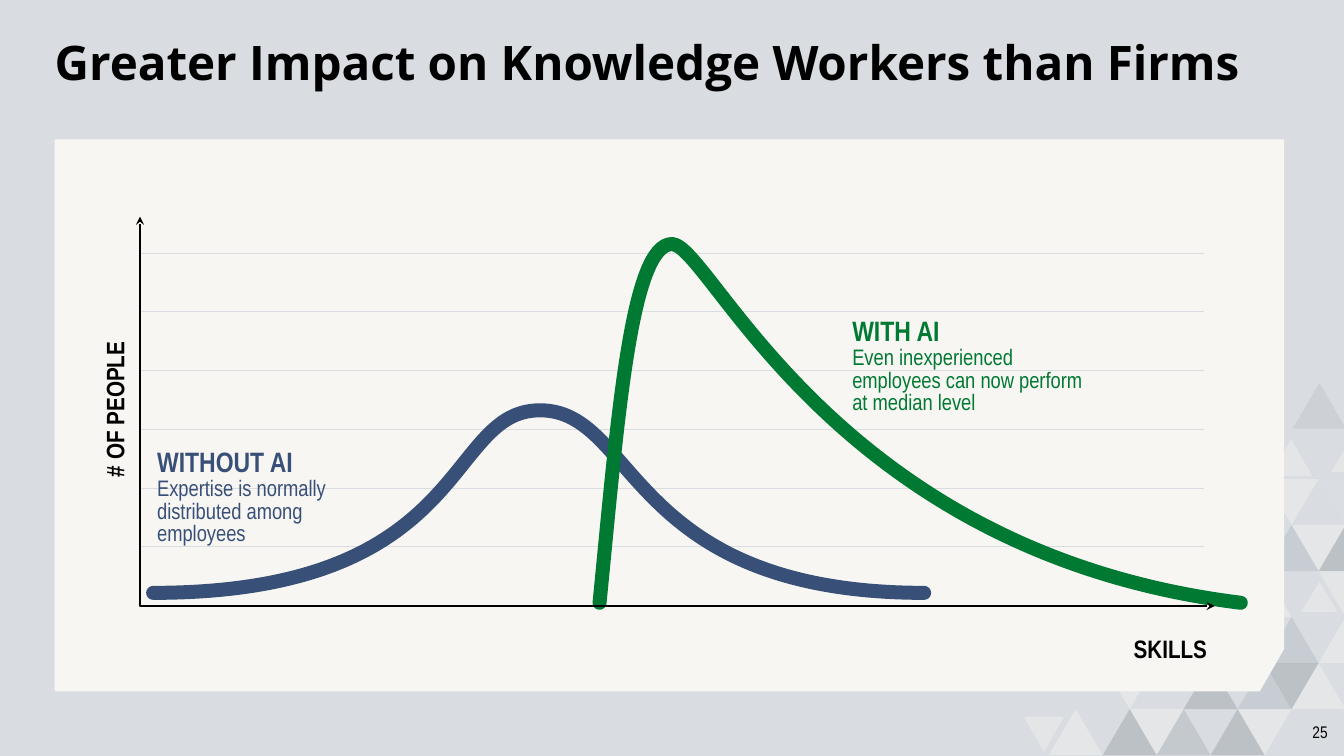
from pptx import Presentation
from pptx.dml.color import RGBColor
from pptx.enum.shapes import MSO_CONNECTOR as Connector
from pptx.enum.text import MSO_ANCHOR as Anchor, PP_ALIGN as Align
from pptx.oxml.ns import qn
from pptx.oxml.xmlchemy import OxmlElement as Element
from pptx.util import Cm, Pt

COLORS = {
    "background": "D9DCE0", "card": "F7F6F3", "text": "000000", "white": "FFFFFF",
    "slate": "4C636F", "dark": "314149", "without_ai": "384F77", "with_ai": "007932",
}
NARROW = "Arial Narrow"
HEADING = {"name": NARROW, "size": Pt(20), "bold": True}
BODY = {"name": NARROW, "size": Pt(16), "bold": False}
AXIS_LABEL = {"name": NARROW, "size": Pt(18), "bold": True}
PAGE_NUMBER = {"name": NARROW, "size": Pt(12)}
TITLE = {"name": "Open Sans", "size": Pt(34), "bold": True}


class SlideBuilder:
    """Holds the slide and draws its elements, with lengths in centimetres."""

    def __init__(self, slide):
        self.slide = slide
        self.shapes = slide.shapes

    def color(self, name):
        return RGBColor.from_string(COLORS[name])

    def background(self, name):
        fill = self.slide.background.fill
        fill.solid()
        fill.fore_color.rgb = self.color(name)

    def outline(self, points, closed):
        start, *rest = [(Cm(x), Cm(y)) for x, y in points]
        builder = self.shapes.build_freeform(*start)
        builder.add_line_segments(rest, close=closed)
        shape = builder.convert_to_shape()
        shape.shadow.inherit = False
        return shape

    def polygon(self, points, color, opacity=100):
        shape = self.outline(points, closed=True)
        shape.fill.solid()
        shape.fill.fore_color.rgb = self.color(color)
        shape.line.fill.background()
        if opacity < 100:
            alpha = Element("a:alpha")
            alpha.set("val", str(opacity * 1000))
            shape.fill._xPr.find(".//" + qn("a:srgbClr")).append(alpha)

    def triangle(self, center, base, apex, half, color, opacity):
        corners = [(center - half, base), (center, apex), (center + half, base)]
        self.polygon(corners, color, opacity)

    def open_path(self, points, color, width):
        shape = self.outline(points, closed=False)
        shape.fill.background()
        shape.line.color.rgb = self.color(color)
        shape.line.width = Pt(width)
        return shape

    def axes(self, points):
        line = self.open_path(points, "text", 1.5).line._get_or_add_ln()
        for tag in ("a:headEnd", "a:tailEnd"):
            end = Element(tag)
            end.set("type", "stealth")
            line.append(end)

    def curve(self, points, color):
        """Start point, then three Bezier points per segment."""
        shape = self.open_path(points, color, 10)
        shape.line._get_or_add_ln().set("cap", "rnd")
        steps = list(shape._element.iter(qn("a:lnTo")))
        for first in range(0, len(steps), 3):
            bezier = Element("a:cubicBezTo")
            steps[first].addprevious(bezier)
            for step in steps[first:first + 3]:
                bezier.append(step[0])
                step.getparent().remove(step)

    def gridline(self, left, right, y):
        line = self.shapes.add_connector(
            Connector.STRAIGHT, Cm(left), Cm(y), Cm(right), Cm(y))
        line.line.color.rgb = self.color("background")
        line.line.width = Pt(0.75)
        line._element.spPr.append(Element("a:effectLst"))

    def text(self, box, paragraphs, color="text", align=Align.LEFT,
             spacing=0.85, rotation=0, **frame_format):
        shape = self.shapes.add_textbox(*map(Cm, box))
        shape.rotation = rotation
        frame = shape.text_frame
        frame.word_wrap = True
        for key, value in frame_format.items():
            setattr(frame, key, value)
        for index, (wording, font_format) in enumerate(paragraphs):
            paragraph = frame.add_paragraph() if index else frame.paragraphs[0]
            paragraph.alignment = align
            paragraph.line_spacing = spacing
            run = paragraph.add_run()
            run.text = wording
            run.font.color.rgb = self.color(color)
            for key, value in font_format.items():
                setattr(run.font, key, value)


def draw_triangles(page):
    # Lattice: rows count up from the bottom, columns leftwards from the right
    half, height, right, bottom = 0.68, 1.16, 33.91, 19.03
    rows = [
        [(3, "card", 39), (4, "dark", 17), (6, "dark", 12),
         (7, "card", 39), (8, "dark", 17), (10, "card", 39)],
        [(0, "white", 5), (1, "card", 39), (2, "dark", 17),
         (3, "slate", 12), (5, "dark", 17), (8, "card", 39)],
        [(0, "card", 39), (2, "slate", 12), (4, "card", 35), (6, "dark", 17)],
        [(0, "card", 35), (3, "card", 39)],
        [(0, "dark", 17), (1, "card", 39), (2, "slate", 12)],
        [(0, "white", 5), (2, "card", 39)],
    ]
    for row, cells in enumerate(rows):
        low = bottom - row * height
        high = low - height
        for column, color, opacity in cells:
            points_up = (row + column) % 2 == 0
            base, apex = (low, high) if points_up else (high, low)
            page.triangle(right - column * half, base, apex, half, color, opacity)

    # Loose triangles: center, base, apex, half width
    for center, base, apex, width, color, opacity in [
        (26.31, 18.06, 18.95, 0.51, "card", 35),
        (33.25, 15.42, 14.66, 0.46, "card", 35),
        (32.54, 11.99, 11.07, 0.53, "card", 35),
        (33.25, 10.8, 9.65, 0.67, "dark", 7),
        (33.88, 11.89, 11.33, 0.33, "card", 35),
        (29.18, 15.67, 16.46, 0.46, "card", 35),
        (31.06, 14.45, 15.32, 0.48, "card", 35),
    ]:
        page.triangle(center, base, apex, width, color, opacity)


def main():
    deck = Presentation()
    deck.slide_width, deck.slide_height = Cm(33.87), Cm(19.05)
    page = SlideBuilder(deck.slides.add_slide(deck.slide_layouts[6]))

    # Backdrop and card with a cut corner
    page.background("background")
    draw_triangles(page)
    page.polygon([(1.38, 3.51), (32.36, 3.51), (32.36, 16.36),
                  (31.75, 17.42), (1.38, 17.42)], "card")

    # Page number and title
    page.text((26.09, 17.93, 7.62, 1.02), [("25", PAGE_NUMBER)], align=Align.RIGHT,
              spacing=1, vertical_anchor=Anchor.MIDDLE)
    page.text((1.38, 0.86, 30.98, 2.49),
              [("Greater Impact on Knowledge Workers than Firms", TITLE)],
              spacing=0.9, margin_left=0)

    # Gridlines
    for level in range(6):
        page.gridline(3.51, 30.33, 6.38 + level * 1.48)

    # Skill distributions
    page.curve([(3.86, 14.94), (11.91, 14.94), (11.2, 10.34), (13.61, 10.34),
                (16.05, 10.34), (15.8, 14.94), (23.29, 14.94)], "without_ai")
    page.curve([(15.11, 15.19), (15.57, 10.52), (15.9, 6.15), (16.94, 6.15),
                (17.93, 6.2), (20.98, 13.92), (31.27, 15.19)], "with_ai")

    # Axes and their labels
    page.axes([(3.53, 5.46), (3.53, 15.27), (30.61, 15.27)])
    page.text((0.86, 9.86, 4.17, 0.91), [("# OF PEOPLE", AXIS_LABEL)],
              align=Align.CENTER, rotation=270)
    page.text((27.41, 15.95, 4.17, 0.91), [("SKILLS", AXIS_LABEL)], align=Align.CENTER)

    # Curve captions
    page.text((3.71, 11.2, 6.4, 2.72), [
        ("WITHOUT AI", HEADING),
        ("Expertise is normally distributed among employees", BODY)], "without_ai")
    page.text((21.23, 7.9, 6.48, 2.72), [
        ("WITH AI", HEADING),
        ("Even inexperienced employees can now perform at median level", BODY)], "with_ai")

    deck.save("out.pptx")


if __name__ == "__main__":
    main()
